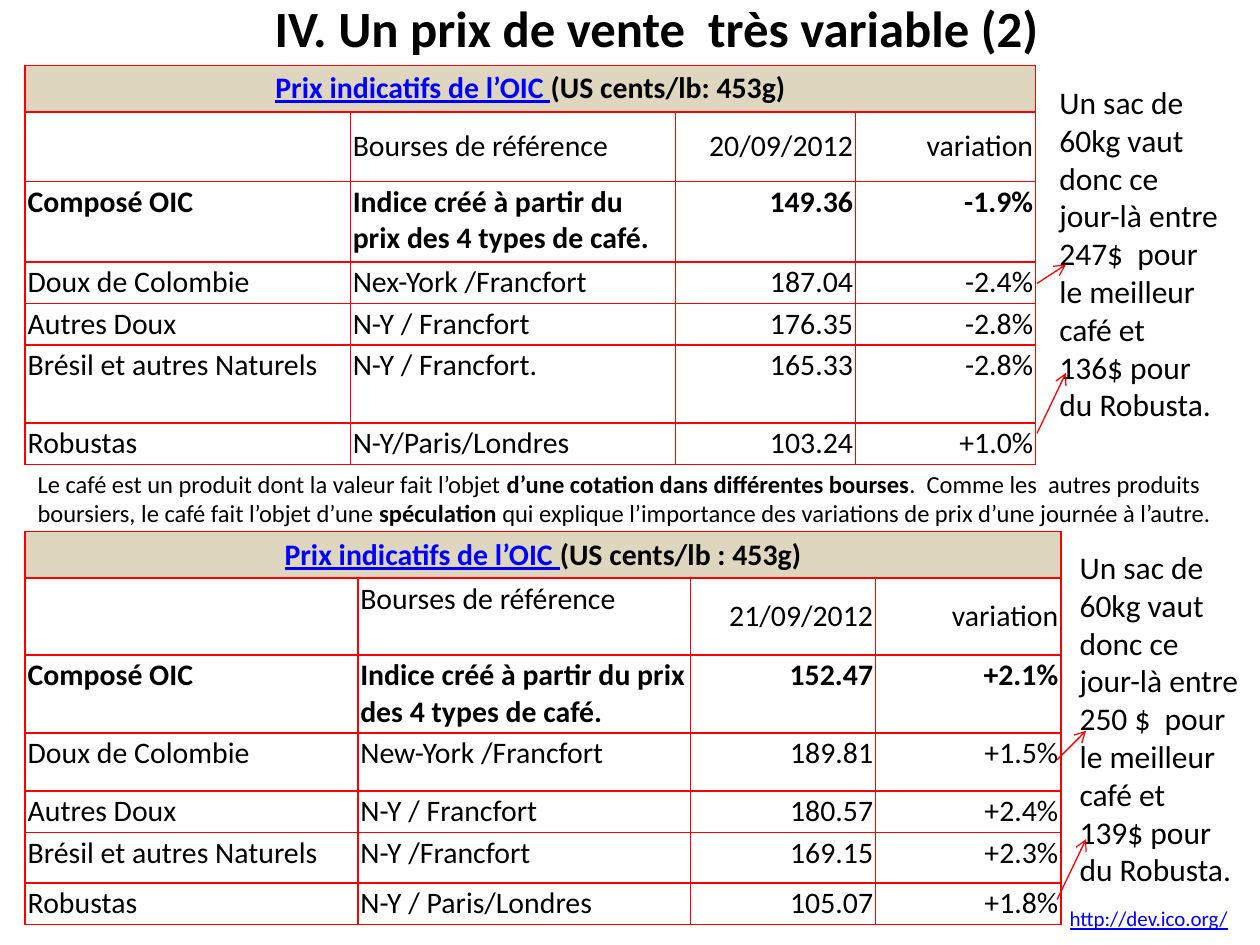
"""Build the slide comparing indicative coffee prices on two consecutive days."""
from dataclasses import dataclass

import pptx
import pptx.dml.color
import pptx.enum.shapes
import pptx.enum.text
import pptx.oxml
import pptx.oxml.ns
import pptx.util

Inches = pptx.util.Inches
Pt = pptx.util.Pt
RGBColor = pptx.dml.color.RGBColor
Align = pptx.enum.text.PP_ALIGN
Anchor = pptx.enum.text.MSO_ANCHOR

BLACK = RGBColor(0x00, 0x00, 0x00)
WHITE = RGBColor(0xFF, 0xFF, 0xFF)
RED = RGBColor(0xFF, 0x00, 0x00)
LINK_BLUE = RGBColor(0x00, 0x00, 0xFF)
SAND = RGBColor(0xDE, 0xD6, 0xBF)


@dataclass(frozen=True)
class Span:
    text: str
    bold: bool = False
    link: bool = False


@dataclass(frozen=True)
class TextBlock:
    left: float
    top: float
    width: float
    height: float
    size: float
    paragraphs: tuple[tuple[Span, ...], ...]
    align: Align = Align.LEFT
    anchor: Anchor = Anchor.TOP


@dataclass(frozen=True)
class PriceTable:
    top: float
    column_widths: tuple[float, ...]
    row_heights: tuple[float, ...]
    unit: str
    reference_anchor: Anchor
    rows: tuple[tuple[str, ...], ...]


@dataclass(frozen=True)
class Arrow:
    start: tuple[float, float]
    end: tuple[float, float]


def sack_note(left: float, top: float, best: str, robusta: str) -> TextBlock:
    """Describe the side note giving the value of a 60 kg sack."""
    return TextBlock(left, top, 1.5, 2.83, 18, (
        (Span(f"Un sac de 60kg vaut donc ce jour-là entre {best}  pour le meilleur café et"),),
        (Span(f"{robusta} pour du Robusta."),),
    ))


INDEX_TEXT = "Indice créé à partir du prix des 4 types de café."

PRICE_TABLES = (
    PriceTable(
        0.52, (2.58, 2.58, 1.43, 1.43), (0.36, 0.55, 0.64, 0.33, 0.33, 0.62, 0.33),
        "(US cents/lb: 453g)", Anchor.MIDDLE,
        (
            ("", "Bourses de référence", "20/09/2012", "variation"),
            ("Composé OIC", INDEX_TEXT, "149.36", "-1.9%"),
            ("Doux de Colombie", "Nex-York /Francfort", "187.04", "-2.4%"),
            ("Autres Doux", "N-Y / Francfort", "176.35", "-2.8%"),
            ("Brésil et autres Naturels", "N-Y / Francfort.", "165.33", "-2.8%"),
            ("Robustas", "N-Y/Paris/Londres", "103.24", "+1.0%"),
        ),
    ),
    PriceTable(
        4.22, (2.64, 2.64, 1.47, 1.47), (0.36, 0.61, 0.62, 0.46, 0.33, 0.4, 0.33),
        "(US cents/lb : 453g)", Anchor.TOP,
        (
            ("", "Bourses de référence", "21/09/2012", "variation"),
            ("Composé OIC", INDEX_TEXT, "152.47", "+2.1%"),
            ("Doux de Colombie", "New-York /Francfort", "189.81", "+1.5%"),
            ("Autres Doux", "N-Y / Francfort", "180.57", "+2.4%"),
            ("Brésil et autres Naturels", "N-Y /Francfort", "169.15", "+2.3%"),
            ("Robustas", "N-Y / Paris/Londres", "105.07", "+1.8%"),
        ),
    ),
)

TEXT_BLOCKS = (
    TextBlock(0.43, -0.11, 9.57, 0.66, 29,
              ((Span("IV. Un prix de vente  très variable (2)", bold=True),),),
              Align.CENTER, Anchor.MIDDLE),
    TextBlock(0.2, 3.67, 9.8, 0.57, 14, ((
        Span("Le café est un produit dont la valeur fait l’objet "),
        Span("d’une cotation dans différentes bourses", bold=True),
        Span(".  Comme les  autres produits boursiers, le café fait l’objet d’une"),
        Span(" spéculation ", bold=True),
        Span("qui explique l’importance des variations de prix d’une journée à l’autre."),
    ),)),
    TextBlock(8.39, 7.14, 1.5, 0.3, 12, ((Span("http://dev.ico.org/", link=True),),)),
    sack_note(8.31, 0.61, "247$", "136$"),
    sack_note(8.47, 4.3, "250 $", "139$"),
)

ARROWS = (
    Arrow((8.39, 6.03), (8.62, 5.8)),
    Arrow((8.39, 7.14), (8.62, 6.66)),
    Arrow((8.23, 3.44), (8.46, 2.96)),
    Arrow((8.23, 2.25), (8.46, 2.1)),
)


def write_paragraph(paragraph, spans: tuple[Span, ...], size: float, align: Align) -> None:
    """Fill a paragraph with its spans in the slide's font."""
    paragraph.alignment = align
    paragraph.font.name = "Calibri"
    paragraph.font.size = Pt(size)
    for span in spans:
        run = paragraph.add_run()
        run.text = span.text
        run.font.bold = span.bold
        run.font.underline = span.link
        run.font.color.rgb = LINK_BLUE if span.link else BLACK


def draw_text(slide, block: TextBlock) -> None:
    """Draw a wrapped text box."""
    box = slide.shapes.add_textbox(Inches(block.left), Inches(block.top),
                                   Inches(block.width), Inches(block.height))
    frame = box.text_frame
    frame.word_wrap = True
    frame.vertical_anchor = block.anchor
    for index, spans in enumerate(block.paragraphs):
        paragraph = frame.add_paragraph() if index else frame.paragraphs[0]
        write_paragraph(paragraph, spans, block.size, block.align)


def style_cell(cell, fill: RGBColor, margin: float, anchor: Anchor) -> None:
    """Give a cell its fill, margins, anchor and red borders."""
    cell.fill.solid()
    cell.fill.fore_color.rgb = fill
    cell.margin_left = cell.margin_right = Inches(margin)
    cell.margin_top = cell.margin_bottom = Inches(margin)
    cell.vertical_anchor = anchor
    properties = cell._tc.get_or_add_tcPr()
    for position, side in enumerate(("lnL", "lnR", "lnT", "lnB")):
        properties.insert(position, pptx.oxml.parse_xml(
            f'<a:{side} {pptx.oxml.ns.nsdecls("a")} w="{Pt(1)}"><a:solidFill>'
            f'<a:srgbClr val="{RED}"/></a:solidFill></a:{side}>'))


def draw_table(slide, prices: PriceTable) -> None:
    """Draw one day's price table under its merged heading."""
    table = slide.shapes.add_table(
        len(prices.row_heights), len(prices.column_widths), Inches(0.2), Inches(prices.top),
        Inches(sum(prices.column_widths)), Inches(sum(prices.row_heights))).table
    table.first_row = table.horz_banding = False
    for column, width in zip(table.columns, prices.column_widths):
        column.width = Inches(width)
    for row, height in zip(table.rows, prices.row_heights):
        row.height = Inches(height)

    for cell in table.rows[0].cells:
        style_cell(cell, SAND, 0.04, Anchor.MIDDLE)
    heading = table.cell(0, 0)
    heading.merge(table.cell(0, len(prices.column_widths) - 1))
    write_paragraph(heading.text_frame.paragraphs[0], (
        Span("Prix indicatifs de l’OIC ", bold=True, link=True),
        Span(prices.unit, bold=True)), 17, Align.CENTER)

    for row, values in enumerate(prices.rows, start=1):
        for column, value in enumerate(values):
            cell = table.cell(row, column)
            anchor = Anchor.TOP
            if row == 1:
                anchor = prices.reference_anchor if column == 1 else Anchor.MIDDLE
            style_cell(cell, WHITE, 0.02, anchor)
            spans = (Span(value, bold=row == 2),) if value else ()
            write_paragraph(cell.text_frame.paragraphs[0], spans, 17,
                            Align.RIGHT if column > 1 else Align.LEFT)


def draw_arrow(slide, arrow: Arrow) -> None:
    """Draw a thin red arrow from a variation to its side note."""
    connector = slide.shapes.add_connector(
        pptx.enum.shapes.MSO_CONNECTOR.STRAIGHT,
        *(Inches(length) for length in arrow.start + arrow.end))
    connector.line.color.rgb = RED
    connector.line.width = Pt(0.75)
    namespace = pptx.oxml.ns.nsdecls("a")
    connector.line._get_or_add_ln().append(
        pptx.oxml.parse_xml(f'<a:tailEnd {namespace} type="arrow"/>'))
    connector._element.spPr.append(pptx.oxml.parse_xml(f"<a:effectLst {namespace}/>"))


def main() -> None:
    """Assemble and save the slide."""
    presentation = pptx.Presentation()
    presentation.slide_width = Inches(10)
    presentation.slide_height = Inches(7.5)
    slide = presentation.slides.add_slide(presentation.slide_layouts[6])
    for prices in PRICE_TABLES:
        draw_table(slide, prices)
    for block in TEXT_BLOCKS:
        draw_text(slide, block)
    for arrow in ARROWS:
        draw_arrow(slide, arrow)
    presentation.save("out.pptx")


if __name__ == "__main__":
    main()
